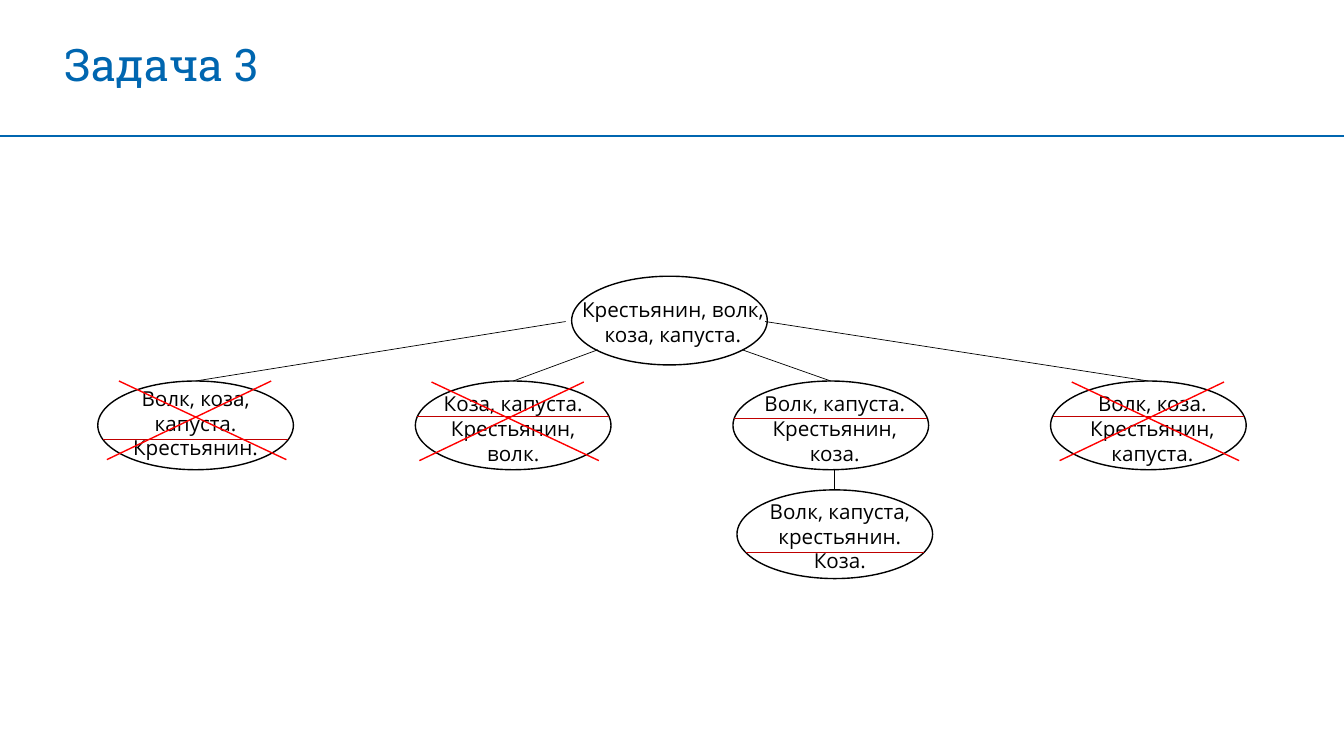
import math

from lxml import etree
from pptx import Presentation, util as u
from pptx.dml.color import RGBColor
from pptx.enum import shapes, text
from pptx.oxml import ns

BLUE = RGBColor(0x00, 0x66, 0xB0)
BLACK = RGBColor(0x00, 0x00, 0x00)
DARK_RED = RGBColor(0xC0, 0x00, 0x00)
RED = RGBColor(0xFF, 0x00, 0x00)

# Grid of the tree, in inches
WIDTH, HEIGHT = 13.33, 7.5
LEFT, STEP = 0.97, 3.15
NODE_W, NODE_H = 1.94, 0.88
ROOT_X, ROOT_Y = 5.67, 2.74
ROW_Y, LAST_Y = 3.78, 4.86


def write(tf, *lines, font="Open Sans", size=14.7, color=BLACK,
          align=text.PP_ALIGN.CENTER, anchor=text.MSO_ANCHOR.TOP):
    """Fill a text frame with one paragraph per line."""
    tf.word_wrap = True
    tf.auto_size = text.MSO_AUTO_SIZE.NONE
    tf.vertical_anchor = anchor
    for i, line in enumerate(lines):
        p = tf.add_paragraph() if i else tf.paragraphs[0]
        p.alignment = align
        r = p.add_run()
        r.text = line
        r.font.name, r.font.size = font, u.Pt(size)
        r.font.color.rgb = color


def add_title(s, title):
    sp = s.shapes.title
    sp.left, sp.top = u.Inches(0.54), u.Inches(0.31)
    sp.width, sp.height = u.Inches(12.27), u.Inches(0.64)
    write(sp.text_frame, title, font="Roboto Slab", size=32, color=BLUE,
          align=text.PP_ALIGN.LEFT)


def add_label(s, x, y, w, h, *lines):
    sp = s.shapes.add_textbox(*map(u.Inches, (x, y, w, h)))
    write(sp.text_frame, *lines)


def add_line(s, x1, y1, x2, y2, color=BLACK, width=0.5):
    line = s.shapes.add_connector(shapes.MSO_CONNECTOR.STRAIGHT,
                                  *map(u.Inches, (x1, y1, x2, y2)))
    line.line.color.rgb = color
    line.line.width = u.Pt(width)
    etree.SubElement(line._element.spPr, ns.qn("a:effectLst"))
    return line


def add_node(s, x, y):
    sp = s.shapes.add_shape(shapes.MSO_SHAPE.OVAL,
                            *map(u.Inches, (x, y, NODE_W, NODE_H)))
    sp.shadow.inherit = False
    sp.fill.background()
    sp.line.color.rgb = BLACK
    sp.line.width = u.Pt(1)
    return sp


def add_river(s, x, y, depth):
    """Draw the chord that separates the two banks inside a node."""
    ratio = (depth - NODE_H / 2) / (NODE_H / 2)
    half = NODE_W / 2 * math.sqrt(1 - ratio ** 2)
    middle = x + NODE_W / 2
    add_line(s, middle - half, y + depth, middle + half, y + depth, DARK_RED)


def add_cross(s, x, y):
    """Strike out a state that is not allowed."""
    add_line(s, x + 0.21, y, x + 1.87, y + 0.78, RED, 1)
    add_line(s, x + 1.72, y, x + 0.09, y + 0.78, RED, 1)


def main():
    prs = Presentation()
    prs.slide_width, prs.slide_height = u.Inches(WIDTH), u.Inches(HEIGHT)
    s = prs.slides.add_slide(prs.slide_layouts[5])

    # Heading
    add_title(s, "Задача 3")
    add_line(s, 0, 1.35, WIDTH, 1.35, BLUE, 1)

    # Starting state
    add_node(s, ROOT_X, ROOT_Y)
    add_label(s, 5.61, 2.9, 2.13, 0.59, "Крестьянин, волк, коза, капуста.")

    # First crossing: lines, label shift, river depth, cross shift, link start
    states = [
        (("Волк, коза, капуста.", "Крестьянин."),
         (0, 0), 0.58, (0, 0), (5.61, 3.19)),
        (("Коза, капуста.", "Крестьянин, волк."),
         (0, 0.05), 0.35, (-0.05, 0.01), (5.93, 3.47)),
        (("Волк, капуста.", "Крестьянин, коза."),
         (0.04, 0.05), 0.37, None, (7.36, 3.47)),
        (("Волк, коза.", "Крестьянин, капуста."),
         (0.04, 0.05), 0.35, (0, 0.01), (7.59, 3.19)),
    ]
    for col, (lines, (dx, dy), depth, cross, start) in enumerate(states):
        x = LEFT + col * STEP
        node = add_node(s, x, ROW_Y)
        add_line(s, *start, x + NODE_W / 2, ROW_Y).end_connect(node, 0)
        add_label(s, x + dx, ROW_Y + dy, NODE_W, 0.84, *lines)
        add_river(s, x, ROW_Y, depth)
        if cross:
            add_cross(s, x + cross[0], ROW_Y + cross[1])

    # Way back from the only allowed state
    x = LEFT + 2 * STEP + 0.04
    node = add_node(s, x, LAST_Y)
    middle = x + NODE_W / 2
    add_line(s, middle, ROW_Y + NODE_H, middle, LAST_Y).end_connect(node, 0)
    add_label(s, x + 0.05, LAST_Y + 0.04, NODE_W, 0.84,
              "Волк, капуста,", "крестьянин.", "Коза.")
    add_river(s, x, LAST_Y, 0.62)

    prs.save("out.pptx")


if __name__ == "__main__":
    main()
